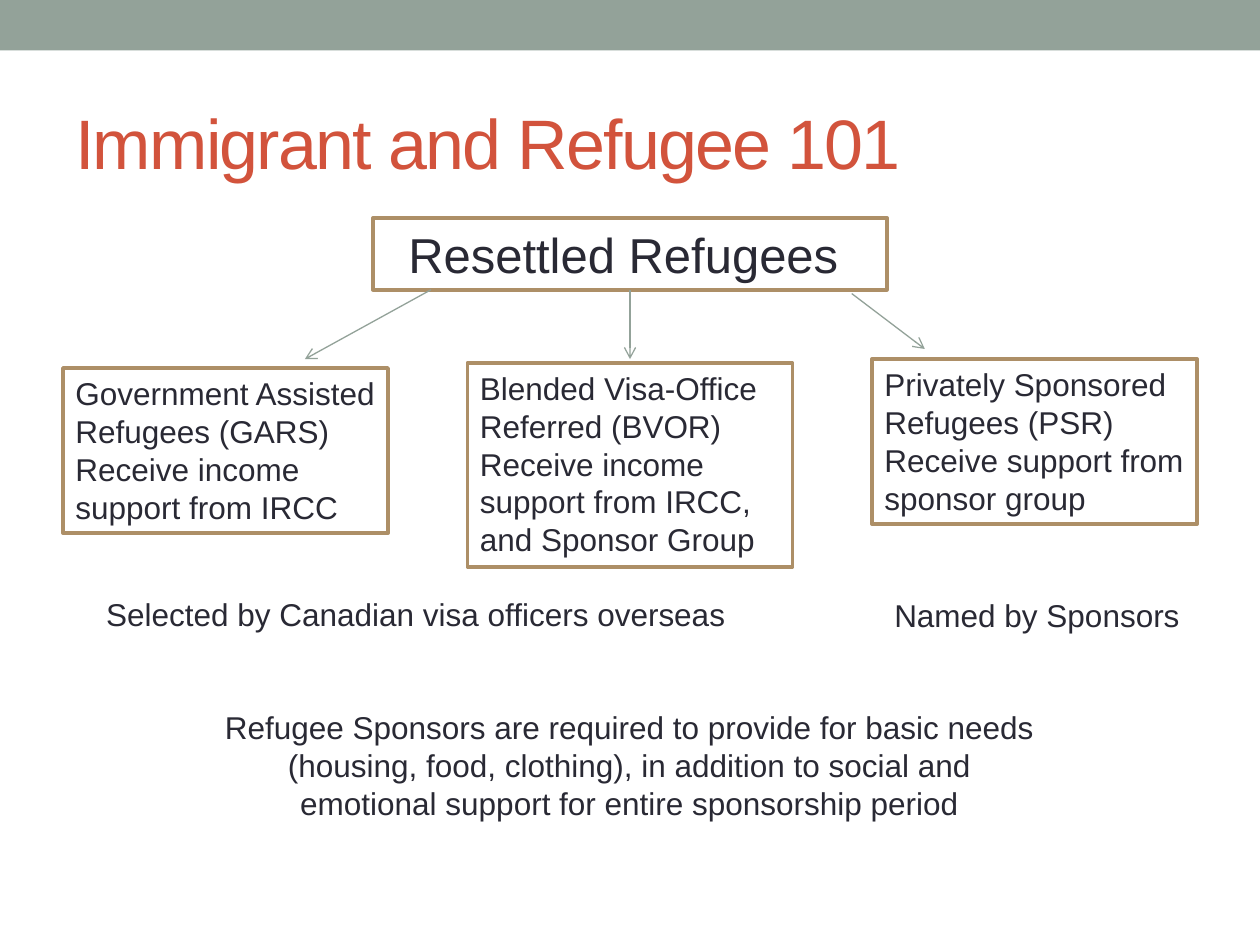
from typing import NamedTuple

from lxml import etree
from pptx import Presentation
from pptx import util as u
from pptx.dml.color import RGBColor
from pptx.enum import shapes, text
from pptx.oxml.ns import qn

FONT = "Arial"
INK = "292934"
SAGE = "93A299"
TAN = "AD8F67"
RUST = "D2533C"
WHITE = "FFFFFF"
LEFT = text.PP_ALIGN.LEFT
MID = text.PP_ALIGN.CENTER


class Area(NamedTuple):
    left: float
    top: float
    width: float
    height: float


class Label(NamedTuple):
    area: Area
    lines: list[str]
    size: float = 18
    align: text.PP_ALIGN = MID
    color: str = INK
    anchor: text.MSO_ANCHOR = text.MSO_ANCHOR.TOP
    space: int = 0


class Arrow(NamedTuple):
    x1: float
    y1: float
    x2: float
    y2: float


def tint(code: str) -> RGBColor:
    return RGBColor.from_string(code)


def place(area: Area) -> list[u.Length]:
    return [u.Inches(side) for side in area]


def write(shape, label: Label) -> None:
    frame = shape.text_frame
    frame.word_wrap = True
    frame.vertical_anchor = label.anchor
    frame.text = "\n".join(label.lines)
    for para in frame.paragraphs:
        para.alignment = label.align
        for run in para.runs:
            run.font.name = FONT
            run.font.size = u.Pt(label.size)
            run.font.color.rgb = tint(label.color)
            if label.space:
                run.font._element.set("spc", str(label.space))


def add_rect(slide, area: Area, fill: str):
    rect = slide.shapes.add_shape(shapes.MSO_SHAPE.RECTANGLE, *place(area))
    rect.shadow.inherit = False
    rect.fill.solid()
    rect.fill.fore_color.rgb = tint(fill)
    rect.line.fill.background()
    return rect


def add_box(slide, label: Label) -> None:
    box = add_rect(slide, label.area, WHITE)
    box.line.color.rgb = tint(TAN)
    box.line.width = u.Pt(2.08)
    write(box, label)


def add_text(slide, label: Label) -> None:
    write(slide.shapes.add_textbox(*place(label.area)), label)


def add_arrow(slide, arrow: Arrow) -> None:
    link = slide.shapes.add_connector(
        shapes.MSO_CONNECTOR.STRAIGHT, *[u.Inches(end) for end in arrow]
    )
    link.line.color.rgb = tint(SAGE)
    link.line.width = u.Pt(0.75)
    etree.SubElement(link.line._get_or_add_ln(), qn("a:tailEnd"), type="arrow")
    etree.SubElement(link._element.spPr, qn("a:effectLst"))


TITLE = Label(
    Area(0.5, 0.58, 9, 1.08), ["Immigrant and Refugee 101"], 40, LEFT, RUST,
    text.MSO_ANCHOR.MIDDLE, -100,
)
ROOT = Label(Area(2.96, 1.73, 4.08, 0.57), ["Resettled Refugees "], 28)
STREAMS = [
    (2.92, 1.31, ["Government Assisted Refugees (GARS)",
                  "Receive income support from IRCC"]),
    (2.88, 1.62, ["Blended Visa-Office Referred (BVOR)",
                  "Receive income support from IRCC, and Sponsor Group"]),
    (2.85, 1.31, ["Privately Sponsored Refugees (PSR)",
                  "Receive support from sponsor group"]),
]
ARROWS = [
    Arrow(3.42, 2.3, 2.42, 2.85),
    Arrow(5, 2.3, 5, 2.85),
    Arrow(6.76, 2.33, 7.34, 2.77),
]
NOTES = [
    Label(Area(1.62, 5.57, 6.75, 1.01), [
        "Refugee Sponsors are required to provide for basic needs "
        "(housing, food, clothing), in addition to social and "
        "emotional support for entire sponsorship period"
    ]),
    Label(Area(0.5, 4.67, 5.67, 0.42),
          ["Selected by Canadian visa officers overseas "]),
    Label(Area(6.96, 4.68, 2.54, 0.4), ["Named by Sponsors"]),
]


def main() -> None:
    deck = Presentation()
    deck.slide_width = u.Inches(10)
    deck.slide_height = u.Inches(7.5)
    slide = deck.slides.add_slide(deck.slide_layouts[6])
    add_rect(slide, Area(0, 0, 10, 0.4), SAGE)
    add_text(slide, TITLE)
    for col, (top, height, lines) in enumerate(STREAMS):
        area = Area(0.5 + col * 3.21, top, 2.58, height)
        add_box(slide, Label(area, lines, align=LEFT))
    add_box(slide, ROOT)
    for arrow in ARROWS:
        add_arrow(slide, arrow)
    for note in NOTES:
        add_text(slide, note)
    deck.save("out.pptx")


if __name__ == "__main__":
    main()
